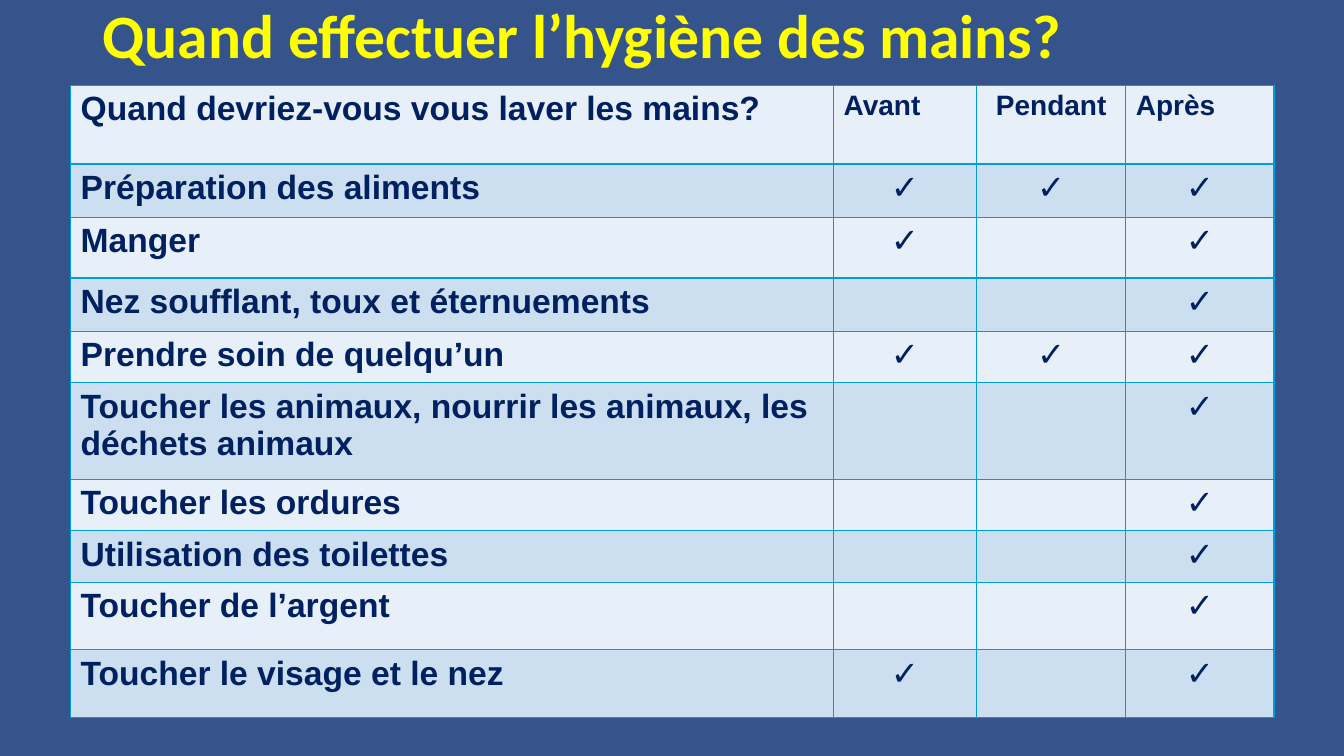
from lxml import etree
from pptx import Presentation
from pptx.dml.color import RGBColor
from pptx.enum import text
from pptx.oxml import ns
from pptx.util import Pt

BACKGROUND, YELLOW, NAVY, BORDER = "36548C", "FFFF00", "002060", "009DD9"
BANDS = ("E7EFF8", "CCDFF1")
HEADINGS = ("Quand devriez-vous vous laver les mains?", "Avant", "Pendant", "Après")
# Each activity with the moments (1 avant, 2 pendant, 3 après) to wash hands
ACTIVITIES = [
    ("Préparation des aliments", (1, 2, 3)),
    ("Manger", (1, 3)),
    ("Nez soufflant, toux et éternuements", (3,)),
    ("Prendre soin de quelqu’un", (1, 2, 3)),
    ("Toucher les animaux, nourrir les animaux, les déchets animaux", (3,)),
    ("Toucher les ordures", (3,)),
    ("Utilisation des toilettes", (3,)),
    ("Toucher de l’argent", (3,)),
    ("Toucher le visage et le nez", (1, 3)),
]
COLUMN_WIDTHS = (545, 102.2, 106.6, 105.8)
ROW_HEIGHTS = (56.2, 38.2, 43.2, 38.2, 36.7, 69.1, 36.7, 36.7, 48.2, 48.2)
LEFT, CENTER = text.PP_ALIGN.LEFT, text.PP_ALIGN.CENTER


def paint(fill_format, colour):
    fill_format.solid()
    fill_format.fore_color.rgb = RGBColor.from_string(colour)


class SlideBuilder:
    def __init__(self, slide):
        self.slide = slide
        paint(slide.background.fill, BACKGROUND)

    def add_text(self, paragraph, wording, size, font, colour, align):
        paragraph.alignment = align
        run = paragraph.add_run()
        run.text = wording
        run.font.name = font
        run.font.size = Pt(size)
        run.font.bold = True
        paint(run.font.fill, colour)

    def title(self, wording, left, top, width, height):
        heading = self.slide.shapes.title
        heading.left, heading.top = Pt(left), Pt(top)
        heading.width, heading.height = Pt(width), Pt(height)
        frame = heading.text_frame
        frame.word_wrap = True
        frame.auto_size = text.MSO_AUTO_SIZE.NONE
        frame.vertical_anchor = text.MSO_ANCHOR.TOP
        frame.paragraphs[0].line_spacing = 0.9
        self.add_text(frame.paragraphs[0], wording, 44, "Calibri", YELLOW, LEFT)

    def border(self, cell):
        """Draw a one-point line on all four sides; call before filling."""
        properties = cell._tc.get_or_add_tcPr()
        for side in ("lnL", "lnR", "lnT", "lnB"):
            line = etree.SubElement(properties, ns.qn(f"a:{side}"), w=str(Pt(1)))
            solid = etree.SubElement(line, ns.qn("a:solidFill"))
            etree.SubElement(solid, ns.qn("a:srgbClr"), val=BORDER)

    def table(self, rows, left, top):
        grid = self.slide.shapes.add_table(
            len(rows), len(COLUMN_WIDTHS), Pt(left), Pt(top),
            Pt(sum(COLUMN_WIDTHS)), Pt(sum(ROW_HEIGHTS))).table
        grid.first_row = grid.horz_banding = False
        for column, width in zip(grid.columns, COLUMN_WIDTHS):
            column.width = Pt(width)
        for r, row in enumerate(rows):
            grid.rows[r].height = Pt(ROW_HEIGHTS[r])
            for c, wording in enumerate(row):
                cell = grid.cell(r, c)
                self.border(cell)
                paint(cell.fill, BANDS[r % 2])
                if wording:
                    size = 20 if r == 0 and c else 24
                    align = LEFT if c == 0 or wording in ("Avant", "Après") else CENTER
                    self.add_text(cell.text_frame.paragraphs[0], wording, size, "Arial", NAVY, align)


def main():
    deck = Presentation()
    deck.slide_width, deck.slide_height = Pt(960), Pt(540)
    builder = SlideBuilder(deck.slides.add_slide(deck.slide_layouts[5]))
    builder.title("Quand effectuer l’hygiène des mains?", 66, 0, 828, 104.4)
    rows = [HEADINGS]
    for activity, moments in ACTIVITIES:
        rows.append((activity, *("✓" if m in moments else "" for m in (1, 2, 3))))
    builder.table(rows, 50.4, 61)
    deck.save("out.pptx")


if __name__ == "__main__":
    main()
